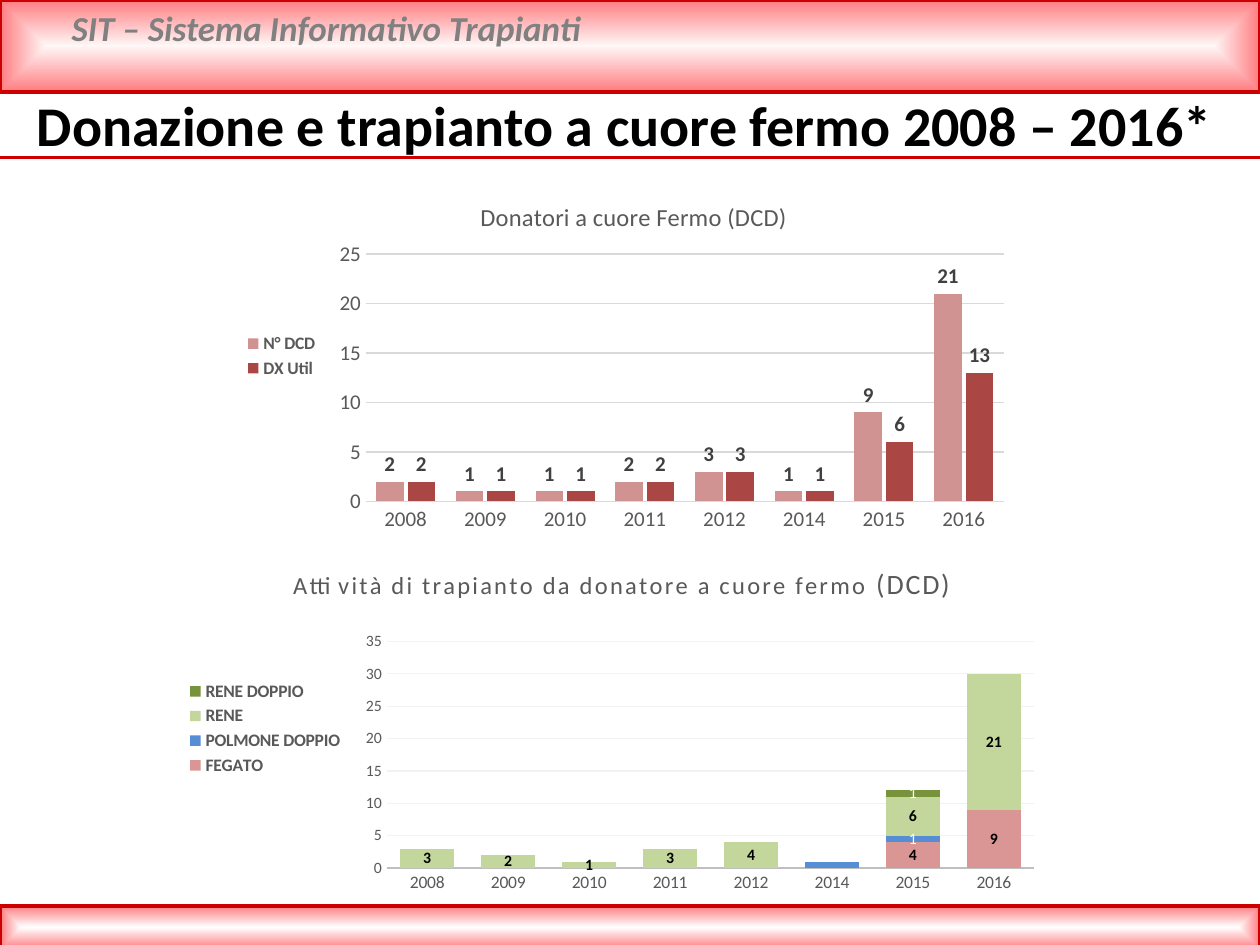
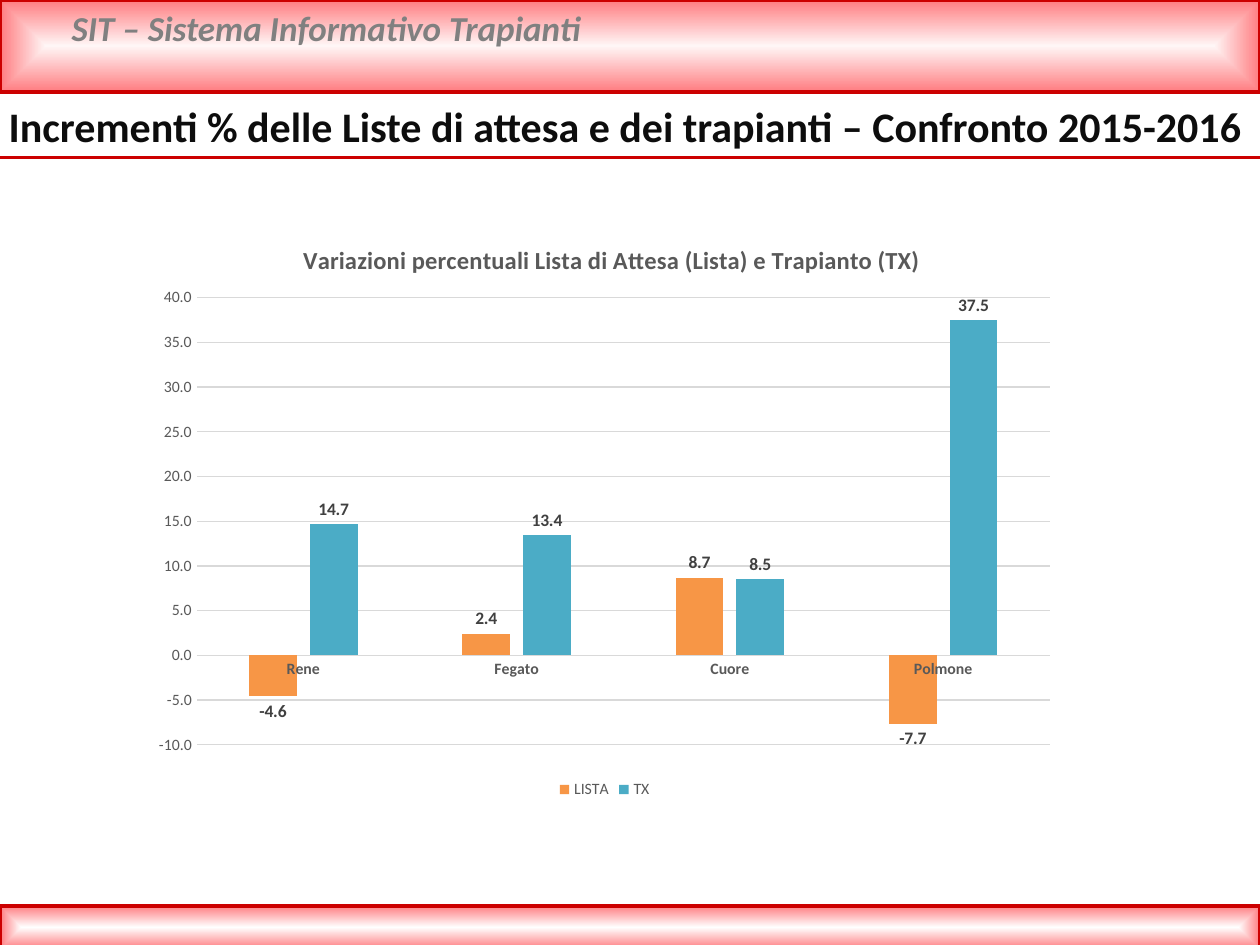
"""Build two slides on heart-stopped donation and on waiting lists versus transplants."""
from lxml.etree import SubElement
from pptx import Presentation
from pptx.chart.data import CategoryChartData
from pptx.dml.color import RGBColor
from pptx.enum.chart import XL_CHART_TYPE, XL_LABEL_POSITION, XL_LEGEND_POSITION, XL_TICK_MARK
from pptx.enum.shapes import MSO_CONNECTOR, MSO_SHAPE
from pptx.enum.text import MSO_ANCHOR, MSO_AUTO_SIZE, PP_ALIGN
from pptx.oxml.ns import qn
from pptx.util import Pt

FONT, RED, PINK, GREY = "Calibri", "CC0000", "FF7C80", "595959"


def style(obj, color, **values):
    """Colour a font, line or fill, then set its other format values."""
    if hasattr(obj, "solid"):
        obj.solid()
        obj.fore_color.rgb = RGBColor.from_string(color)
    else:
        obj.color.rgb = RGBColor.from_string(color)
    for name, value in values.items():
        setattr(obj, name, value)


def place(parent, index, **fractions):
    """Give a chart title or plot area a manual layout, in fractions of the chart."""
    for old in parent.findall(qn("c:layout")):
        parent.remove(old)
    layout = parent.makeelement(qn("c:layout"))
    parent.insert(index, layout)
    manual = SubElement(layout, qn("c:manualLayout"))
    if "w" in fractions:
        SubElement(manual, qn("c:layoutTarget"), val="inner")
    for mode in ("xMode", "yMode"):
        SubElement(manual, qn(f"c:{mode}"), val="edge")
    for name, value in fractions.items():
        SubElement(manual, qn(f"c:{name}"), val=str(value))


prs = Presentation()
prs.slide_width, prs.slide_height = Pt(720), Pt(540)
layout = prs.slide_layouts[5]

slides = [
    {
        "title": "Donazione e trapianto a cuore fermo 2008 – 2016*",
        "box": (0, 48.2, 714.2, 46), "size": 32, "color": "000000",
        "wrap": True, "align": PP_ALIGN.CENTER,
        "charts": [
            {
                "at": (132.5, 99.4, 450, 208), "kind": XL_CHART_TYPE.COLUMN_CLUSTERED,
                "title": [("Donatori a cuore Fermo (DCD)", 14)], "bold": False, "spc": 0,
                "title_at": (0.31, 0.06), "plot": (0.17, 0.22, 0.81, 0.68),
                "cats": ["2008", "2009", "2010", "2011", "2012", "2014", "2015", "2016"],
                "series": [
                    ("N° DCD", [2, 1, 1, 2, 3, 1, 9, 21], "D19392", "404040", True),
                    ("DX Util", [2, 1, 1, 2, 3, 1, 6, 13], "AA4744", "404040", True),
                ],
                "gap": 75, "overlap": -14, "scale": (0, 25), "format": "General",
                "sizes": {"cat": 12, "val": 12, "label": 12, "legend": 10},
                "cat_bold": False, "legend_bold": True, "legend": XL_LEGEND_POSITION.LEFT,
                "axis": "D9D9D9", "grid": "D9D9D9",
            },
            {
                "at": (99.4, 308.2, 506.9, 216), "kind": XL_CHART_TYPE.COLUMN_STACKED,
                "title": [("Attività di trapianto da donatore a cuore fermo ", 14), ("(DCD)", 16)],
                "bold": False, "spc": 120,
                "title_at": (0.13, 0.06), "plot": (0.24, 0.27, 0.73, 0.6),
                "cats": ["2008", "2009", "2010", "2011", "2012", "2014", "2015", "2016"],
                "series": [
                    ("FEGATO", [None] * 6 + [4, 9], "D99694", "000000", True),
                    ("POLMONE DOPPIO", [None] * 5 + [1, 1, None], "558ED5", None, False),
                    ("RENE", [3, 2, 1, 3, 4, None, 6, 21], "C3D69B", "000000", True),
                    ("RENE DOPPIO", [None] * 6 + [1, None], "77933C", "FFFFFF", False),
                ],
                "gap": 50, "overlap": 100, "scale": (0, 35), "format": "General",
                "sizes": {"cat": 10, "val": 9, "label": 9, "legend": 10},
                "cat_bold": False, "legend_bold": True, "legend": XL_LEGEND_POSITION.LEFT,
                "axis": "BFBFBF", "grid": "F2F2F2",
            },
        ],
    },
    {
        "title": "Incrementi % delle Liste di attesa e dei trapianti – Confronto 2015-2016",
        "box": (-2.2, 54, 726.5, 36), "size": 24, "color": "0D0D0D",
        "wrap": False, "align": PP_ALIGN.LEFT,
        "charts": [
            {
                "at": (80.6, 123.1, 529.9, 336.2), "kind": XL_CHART_TYPE.COLUMN_CLUSTERED,
                "title": [("Variazioni percentuali Lista di Attesa (Lista) e Trapianto (TX)", 14)],
                "bold": True, "spc": 0,
                "title_at": (0.17, 0.04), "plot": (0.06, 0.14, 0.92, 0.76),
                "cats": ["Rene", "Fegato", "Cuore", "Polmone"],
                "series": [
                    ("LISTA", [-4.6, 2.4, 8.7, -7.7], "F79646", "404040", True),
                    ("TX", [14.7, 13.4, 8.5, 37.5], "4BACC6", "404040", True),
                ],
                "gap": 219, "overlap": -27, "scale": (-10, 40), "format": "0.0",
                "sizes": {"cat": 9, "val": 9, "label": 10, "legend": 9},
                "cat_bold": True, "legend_bold": False, "legend": XL_LEGEND_POSITION.BOTTOM,
                "axis": "D9D9D9", "grid": "D9D9D9",
            },
        ],
    },
]

for number, page in enumerate(slides):
    s = prs.slides.add_slide(layout)

    if number == 0:
        shared = []
        for top, height, centre in ((0, 52.6, "FFF6F6"), (517.7, 24.5, "FFFFFF")):
            band = s.shapes.add_shape(MSO_SHAPE.RECTANGLE, Pt(0), Pt(top), Pt(720), Pt(height))
            band.shadow.inherit = False
            band.fill.gradient()
            for stop, color, position in zip(band.fill.gradient_stops, (centre, PINK), (0, 1)):
                style(stop, color, position=position)
            grad = band.element.find(".//" + qn("a:gradFill"))
            grad.remove(grad.find(qn("a:lin")))
            burst = SubElement(grad, qn("a:path"), path="shape")
            SubElement(burst, qn("a:fillToRect"), l="50000", t="50000", r="50000", b="50000")
            style(band.line, RED, width=Pt(2))
            shared.append(band)

        rule = s.shapes.add_connector(MSO_CONNECTOR.STRAIGHT, Pt(0), Pt(90), Pt(720), Pt(90))
        style(rule.line, RED, width=Pt(2))
        SubElement(rule.element.spPr, qn("a:effectLst"))
        header = s.shapes.add_textbox(Pt(33.8), Pt(0), Pt(646.6), Pt(31.7))
        header.text_frame.word_wrap = True
        r = header.text_frame.paragraphs[0].add_run()
        r.text = "SIT – Sistema Informativo Trapianti"
        style(r.font, "808080", name=FONT, size=Pt(20), bold=True, italic=True)
        for shape_id, sp in enumerate(shared + [rule, header], 101):
            sp.element.find(".//" + qn("p:cNvPr")).set("id", str(shape_id))
            layout.shapes.element.append(sp.element)

    title = s.shapes.title
    title.left, title.top, title.width, title.height = map(Pt, page["box"])
    tf = title.text_frame
    tf.auto_size, tf.word_wrap = MSO_AUTO_SIZE.NONE, page["wrap"]
    tf.vertical_anchor = MSO_ANCHOR.MIDDLE
    p = tf.paragraphs[0]
    p.alignment = page["align"]
    r = p.add_run()
    r.text = page["title"]
    style(r.font, page["color"], name=FONT, size=Pt(page["size"]), bold=True)

    for c in page["charts"]:
        data = CategoryChartData()
        data.categories = c["cats"]
        for name, values, *_ in c["series"]:
            data.add_series(name, values)
        chart = s.shapes.add_chart(c["kind"], *map(Pt, c["at"]), data).chart
        style(chart.font, "000000", name=FONT, size=Pt(10))
        sizes = {part: Pt(size) for part, size in c["sizes"].items()}

        chart.has_title = True
        p = chart.chart_title.text_frame.paragraphs[0]
        for text, size in c["title"]:
            r = p.add_run()
            r.text = text
            style(r.font, GREY, name=FONT, size=Pt(size), bold=c["bold"])
            r._r.get_or_add_rPr().set("spc", str(c["spc"]))
        chart_xml = chart.element.find(qn("c:chart"))
        place(chart_xml.find(qn("c:title")), 1, **dict(zip("xy", c["title_at"])))
        place(chart_xml.find(qn("c:plotArea")), 0, **dict(zip("xywh", c["plot"])))

        chart.has_legend = True
        chart.legend.position = c["legend"]
        chart.legend.include_in_layout = False
        style(chart.legend.font, GREY, name=FONT, size=sizes["legend"], bold=c["legend_bold"])

        cat, val = chart.category_axis, chart.value_axis
        for axis in (cat, val):
            axis.major_tick_mark = axis.minor_tick_mark = XL_TICK_MARK.NONE
        style(cat.tick_labels.font, GREY, name=FONT, size=sizes["cat"], bold=c["cat_bold"])
        style(val.tick_labels.font, GREY, name=FONT, size=sizes["val"], bold=False)
        style(cat.format.line, c["axis"], width=Pt(0.75))
        val.format.line.fill.background()
        val.has_major_gridlines = True
        style(val.major_gridlines.format.line, c["grid"], width=Pt(0.75))
        val.minimum_scale, val.maximum_scale = c["scale"]
        val.major_unit = 5
        val.tick_labels.number_format = c["format"]
        val.tick_labels.number_format_is_linked = False

        plot = chart.plots[0]
        plot.vary_by_categories = False
        plot.gap_width, plot.overlap = c["gap"], c["overlap"]
        for series, (name, values, fill, label, bold) in zip(plot.series, c["series"]):
            series.invert_if_negative = False
            style(series.format.fill, fill)
            labels = series.data_labels
            if label is None:
                labels.show_value = False
                style(series.points[6].data_label.font, "FFFFFF", name=FONT, size=sizes["label"])
                continue
            style(labels.font, label, name=FONT, size=sizes["label"], bold=bold)
            labels.show_value = True
            labels.number_format = c["format"]
            labels.number_format_is_linked = False
            if c["kind"] == XL_CHART_TYPE.COLUMN_CLUSTERED:
                labels.position = XL_LABEL_POSITION.OUTSIDE_END

prs.save("out.pptx")
